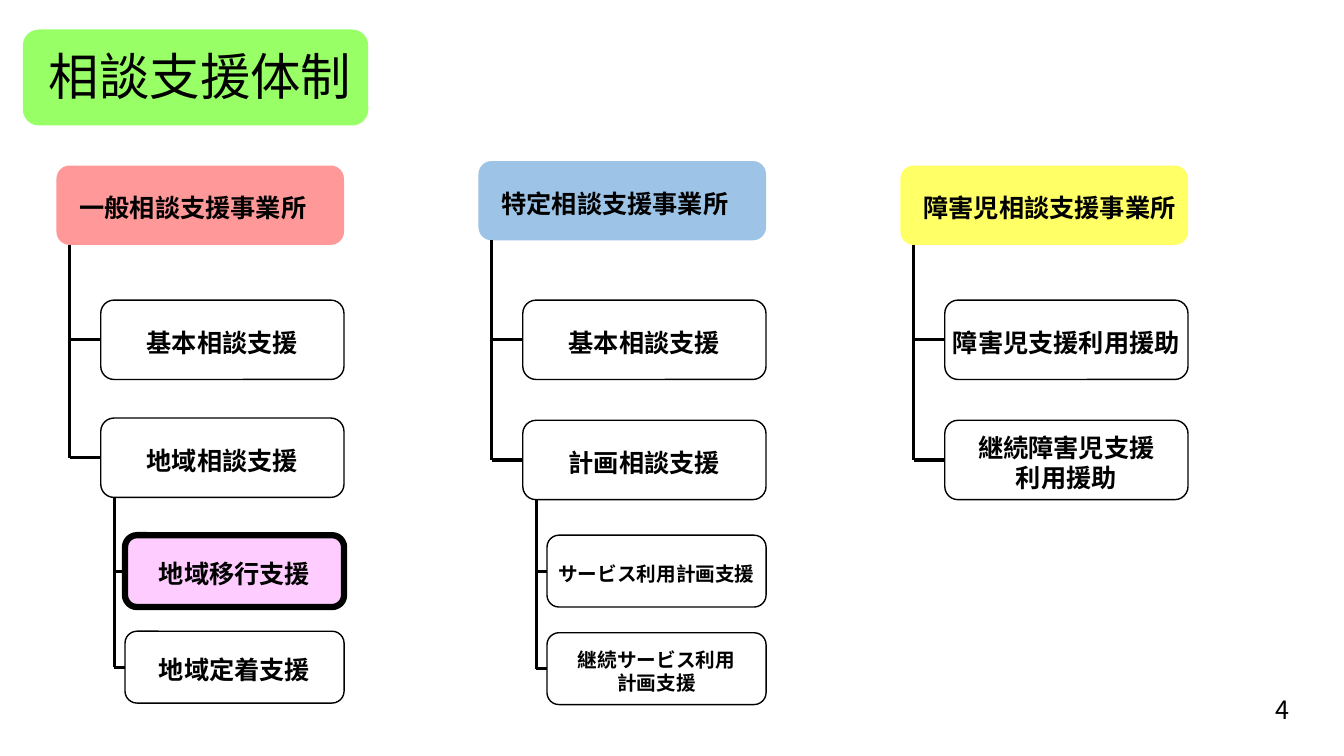
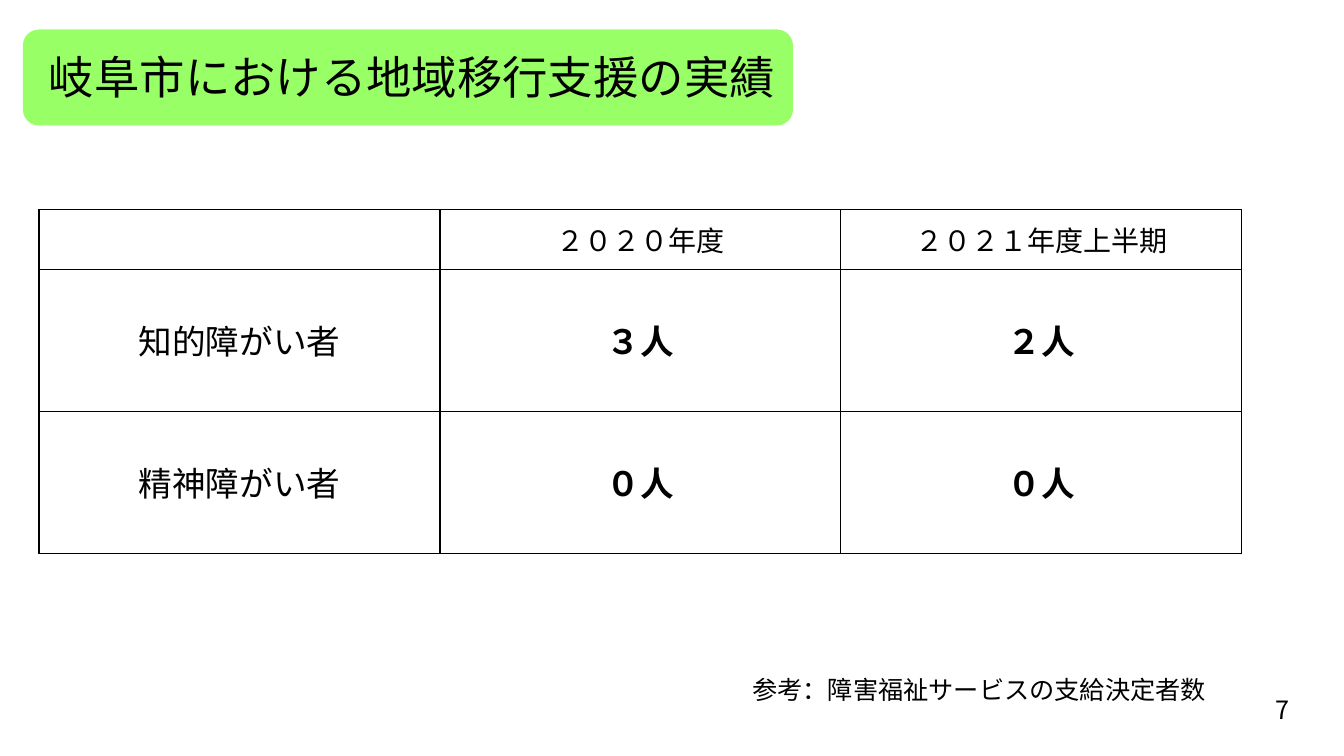
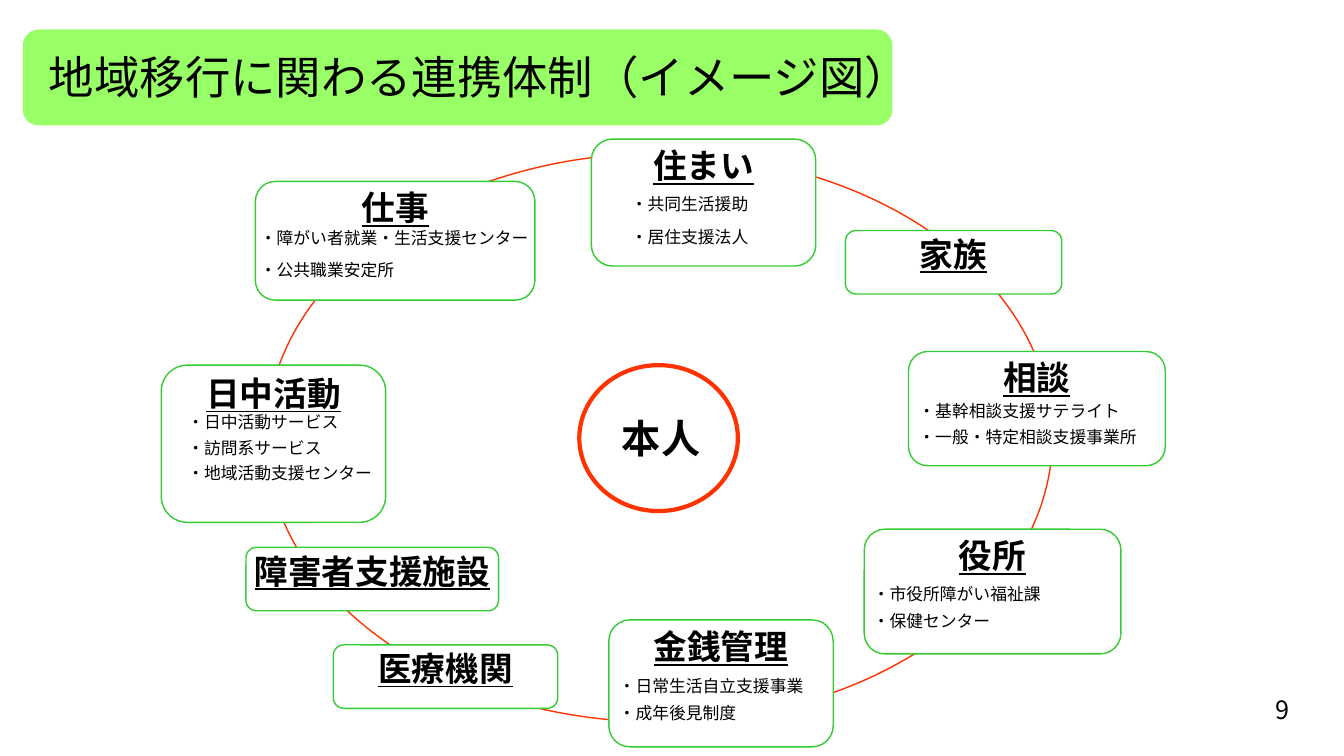
"""Build three slides on consultation support and community transition."""
import pptx
import pptx.dml.color
import pptx.enum.shapes
import pptx.enum.text
import pptx.oxml
import pptx.oxml.ns
import pptx.util

FONT = "Noto Sans CJK JP"
COLORS = {
    "black": "000000", "white": "FFFFFF", "title": "99FF66",
    "general": "FF9999", "specific": "9DC3E6", "child": "FFFF66",
    "highlight": "FFCCFF", "ring": "FF3300", "card": "33CC33",
}
WIDTH = pptx.util.Inches(13.33)
HEIGHT = pptx.util.Inches(7.5)
SHAPES = pptx.enum.shapes.MSO_SHAPE
ALIGN = pptx.enum.text.PP_ALIGN
ANCHOR = pptx.enum.text.MSO_ANCHOR

COLUMN_LEFT, COLUMN_STEP, COLUMN_WIDTH = 4.2, 31.4, 21.4
SERVICE_INDENT, SERVICE_HEIGHT, SERVICE_TRUNK = 3.3, 10.5, 1.0
DETAIL_INDENT, DETAIL_HEIGHT, DETAIL_TRUNK = 5.1, 9.5, 4.3

OFFICES = [
    ("一般相談支援事業所", "general", 21.9,
     [("基本相談支援", 39.7), ("地域相談支援", 55.3)],
     [("地域移行支援", 70.8), ("地域定着支援", 83.5)], 18),
    ("特定相談支援事業所", "specific", 21.3,
     [("基本相談支援", 39.7), ("計画相談支援", 55.6)],
     [("サービス利用計画支援", 70.8), ("継続サービス利用計画支援", 83.7)], 14),
    ("障害児相談支援事業所", "child", 21.9,
     [("障害児支援利用援助", 39.7), ("継続障害児支援利用援助", 55.6)], [], 18),
]
HIGHLIGHTED = "地域移行支援"

RESULTS = [
    ["", "２０２０年度", "２０２１年度上半期"],
    ["知的障がい者", "３人", "２人"],
    ["精神障がい者", "０人", "０人"],
]

PARTNERS = [
    ("住まい", (44.0, 18.4, 16.7, 16.8), ["・共同生活援助", "・居住支援法人"], (2.2, 6.6), 9),
    ("家族", (62.9, 30.5, 16.1, 8.4), [], (0, 0), 0),
    ("相談", (67.6, 46.5, 19.1, 15.1),
     ["・基幹相談支援サテライト", "・一般・特定相談支援事業所"], (0, 5.9), 4),
    ("金銭管理", (45.3, 82.0, 16.7, 16.8),
     ["・日常生活自立支援事業", "・成年後見制度"], (0, 6.7), 5),
    ("日中活動", (12.0, 48.3, 16.7, 20.8),
     ["・日中活動サービス", "・訪問系サービス", "・地域活動支援センター"], (1.2, 5.5), 4),
    ("医療機関", (24.8, 85.3, 16.7, 8.4), [], (0, 0), 0),
    ("仕事", (19.0, 24.0, 20.8, 15.7),
     ["・障がい者就業・生活支援センター", "・公共職業安定所"], (-0.4, 5.5), 8),
    ("役所", (64.3, 70.0, 19.1, 16.5), ["・市役所障がい福祉課", "・保健センター"], (-0.1, 6.5), 5),
    ("障害者支援施設", (18.3, 72.4, 18.8, 8.4), [], (0, 0), 0),
]


def across(percent):
    """Turn a percentage of the slide's width into a length."""
    return pptx.util.Emu(round(WIDTH * percent / 100))


def down(percent):
    """Turn a percentage of the slide's height into a length."""
    return pptx.util.Emu(round(HEIGHT * percent / 100))


def place(left, top, width, height):
    """Turn a rectangle in percentages into lengths."""
    return across(left), down(top), across(width), down(height)


def color(name):
    """Look up a named colour."""
    return pptx.dml.color.RGBColor.from_string(COLORS[name])


def style_paragraph(paragraph, size, bold=False, underline=False, align=ALIGN.LEFT):
    """Set alignment and font of a paragraph, for Latin and Japanese alike."""
    paragraph.alignment = align
    font = paragraph.font
    font.size = pptx.util.Pt(size)
    font.bold = bold
    font.underline = underline
    font.color.rgb = color("black")
    font.name = FONT
    properties = paragraph._p.pPr.find(pptx.oxml.ns.qn("a:defRPr"))
    east_asian = properties.makeelement(pptx.oxml.ns.qn("a:ea"), {"typeface": FONT})
    properties.append(east_asian)


def write(shape, lines, size, gap=0, anchor=ANCHOR.TOP, margins=None, **style):
    """Write one styled paragraph for each line into a shape."""
    frame = shape.text_frame
    frame.word_wrap = True
    frame.vertical_anchor = anchor
    if margins:
        frame.margin_left, frame.margin_top, frame.margin_right, frame.margin_bottom = map(
            pptx.util.Inches, margins)
    frame.text = "\n".join(lines)
    for paragraph in frame.paragraphs:
        paragraph.space_after = pptx.util.Pt(gap)
        style_paragraph(paragraph, size, **style)


def add_text(slide, box, lines, size, **style):
    """Add a text box."""
    shape = slide.shapes.add_textbox(*place(*box))
    write(shape, lines, size, **style)
    return shape


def add_box(slide, box, fill=None, line=None, weight=1, kind=SHAPES.ROUNDED_RECTANGLE):
    """Add a flat preset shape with optional fill and line."""
    shape = slide.shapes.add_shape(kind, *place(*box))
    shape.shadow.inherit = False
    if fill:
        shape.fill.solid()
        shape.fill.fore_color.rgb = color(fill)
    else:
        shape.fill.background()
    if line:
        shape.line.color.rgb = color(line)
        shape.line.width = pptx.util.Pt(weight)
    else:
        shape.line.fill.background()
    return shape


def add_line(slide, start, end):
    """Add a straight black line between two points."""
    straight = pptx.enum.shapes.MSO_CONNECTOR.STRAIGHT
    line = slide.shapes.add_connector(straight, *start, *end)
    line.line.color.rgb = color("black")
    line.line.width = pptx.util.Pt(2.25)
    properties = line._element.spPr
    properties.append(properties.makeelement(pptx.oxml.ns.qn("a:effectLst"), {}))
    return line


def add_slide(presentation, title, band_width, number, size=32.4):
    """Add a blank slide with the title band and page number."""
    slide = presentation.slides.add_slide(presentation.slide_layouts[6])
    add_box(slide, (1.7, 3.9, band_width, 12.7), fill="title")
    heading = add_text(slide, (2.9, 6.1, 70, 8.8), [title], size, anchor=ANCHOR.MIDDLE)
    heading.text_frame.paragraphs[0].line_spacing = 0.9
    add_text(slide, (94.2, 91.2, 5.8, 5.3), [str(number)], 18)
    return slide


def add_services(slide, left, indent, height, services, size):
    """Add the boxes of one tree level, all ending at the column's right edge."""
    boxes = []
    for label, top in services:
        marked = label == HIGHLIGHTED
        box = add_box(slide, (left + indent, top, COLUMN_WIDTH - indent, height),
                      fill="highlight" if marked else None,
                      line="black", weight=4.5 if marked else 1)
        side = 0.2 if len(label) > 10 else 0
        write(box, [label], size, anchor=ANCHOR.MIDDLE, margins=(side, 0.05, side, 0),
              bold=True, align=ALIGN.CENTER)
        boxes.append(box)
    return boxes


def add_branches(slide, parent, trunk, children):
    """Draw a trunk below the parent with a branch to each child."""
    def middle(child):
        return child.top + child.height // 2

    x = across(trunk)
    add_line(slide, (x, parent.top + parent.height), (x, middle(children[-1])))
    for child in children:
        branch = add_line(slide, (x, middle(child)), (child.left, middle(child)))
        branch.end_connect(child, 1)


def build_system(presentation):
    """Build the tree of consultation offices."""
    slide = add_slide(presentation, "相談支援体制", 25.7, 4, size=36)
    for index, (name, fill, top, services, details, detail_size) in enumerate(OFFICES):
        left = COLUMN_LEFT + index * COLUMN_STEP
        office = add_box(slide, (left, top, COLUMN_WIDTH, SERVICE_HEIGHT), fill=fill)
        write(office, [name], 18, anchor=ANCHOR.MIDDLE, margins=(0.19, 0.05, 0, 0), bold=True)
        boxes = add_services(slide, left, SERVICE_INDENT, SERVICE_HEIGHT, services, 18)
        add_branches(slide, office, left + SERVICE_TRUNK, boxes)
        if details:
            leaves = add_services(slide, left, DETAIL_INDENT, DETAIL_HEIGHT, details, detail_size)
            add_branches(slide, boxes[-1], left + DETAIL_TRUNK, leaves)


def border_cell(cell):
    """Give a cell thin black borders on all sides."""
    properties = cell._tc.get_or_add_tcPr()
    for index, side in enumerate(("lnL", "lnR", "lnT", "lnB")):
        properties.insert(index, pptx.oxml.parse_xml(
            f'<a:{side} {pptx.oxml.ns.nsdecls("a")} w="12700"><a:solidFill>'
            f'<a:srgbClr val="{COLORS["black"]}"/></a:solidFill></a:{side}>'))


def build_results(presentation):
    """Build the table of results."""
    slide = add_slide(presentation, "岐阜市における地域移行支援の実績", 57.3, 7)
    heights = [7.9, 18.8, 18.8]
    table = slide.shapes.add_table(
        len(RESULTS), len(RESULTS[0]), *place(2.9, 27.7, 89.5, sum(heights))).table
    for row, values in enumerate(RESULTS):
        table.rows[row].height = down(heights[row])
        for column, value in enumerate(values):
            cell = table.cell(row, column)
            cell.fill.solid()
            cell.fill.fore_color.rgb = color("white")
            cell.vertical_anchor = ANCHOR.MIDDLE
            cell.text = value
            style_paragraph(cell.text_frame.paragraphs[0], 24 if row else 20,
                            bold=row > 0 and column > 0, align=ALIGN.CENTER)
            border_cell(cell)
    add_text(slide, (53.3, 88.5, 39.1, 5.3), ["参考：障害福祉サービスの支給決定者数"], 18,
             align=ALIGN.CENTER)


def add_partner(slide, name, box, items, offset, gap):
    """Add a card with an underlined heading and its items."""
    card = add_box(slide, box, fill="white", line="card")
    write(card, [name], 24, margins=(0, 0, 0, 0), bold=True, underline=True, align=ALIGN.CENTER)
    if items:
        left, top, width, height = box
        right, below = offset
        add_text(slide, (left + right, top + below, width + 1.5, height - below),
                 items, 12, gap=gap)


def build_network(presentation):
    """Build the ring of partners around the person."""
    slide = add_slide(presentation, "地域移行に関わる連携体制（イメージ図）", 64.7, 9)
    add_box(slide, (19.8, 20.3, 58.5, 75.2), line="ring", kind=SHAPES.OVAL)
    person = add_box(slide, (43.1, 48.3, 11.8, 19.3), line="ring", weight=3, kind=SHAPES.OVAL)
    write(person, ["本人"], 28, anchor=ANCHOR.MIDDLE, margins=(0.05, 0, 0, 0),
          bold=True, align=ALIGN.CENTER)
    for partner in PARTNERS:
        add_partner(slide, *partner)


def main():
    """Build and save the presentation."""
    presentation = pptx.Presentation()
    presentation.slide_width = WIDTH
    presentation.slide_height = HEIGHT
    build_system(presentation)
    build_results(presentation)
    build_network(presentation)
    presentation.save("out.pptx")


if __name__ == "__main__":
    main()
